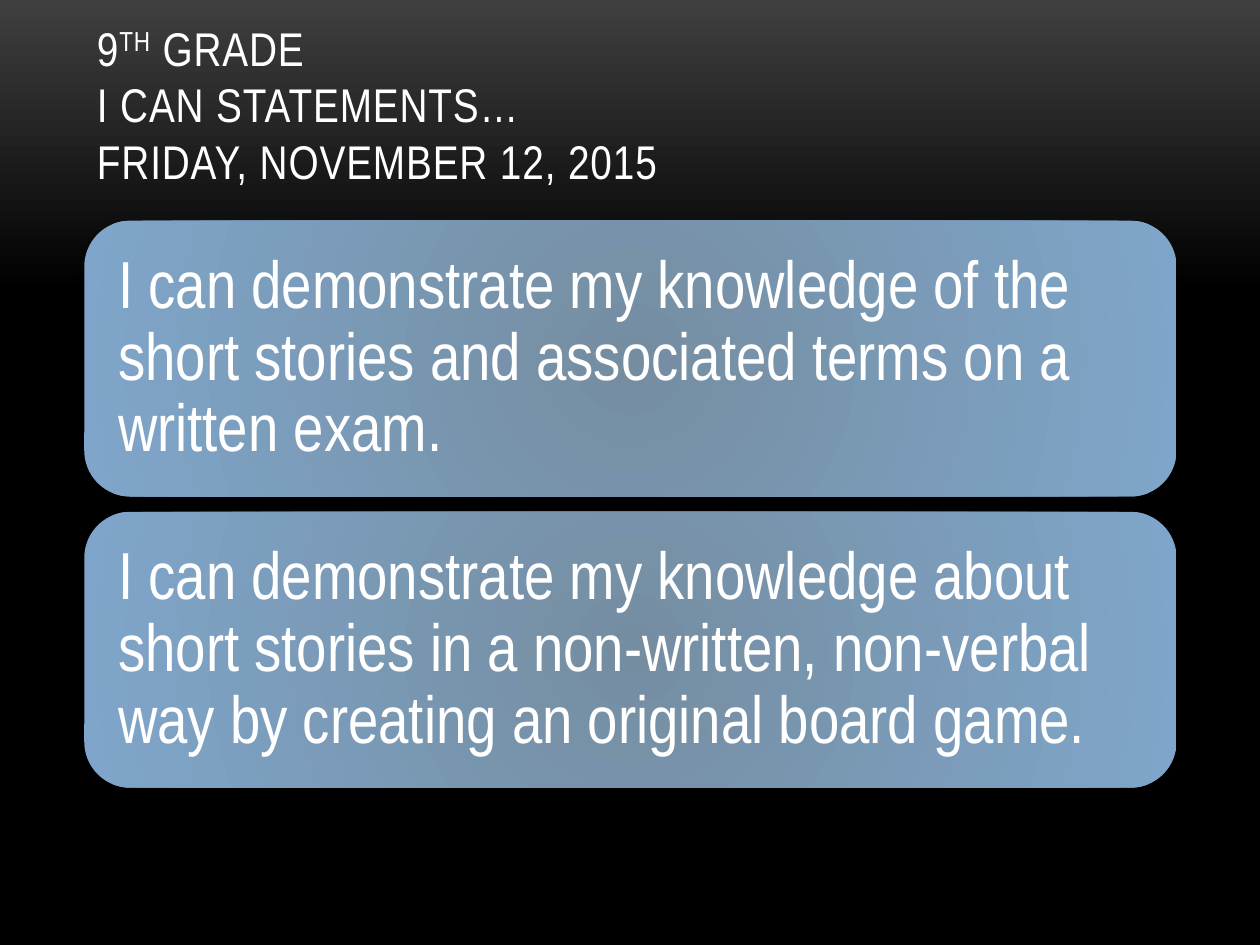
from lxml import etree
from pptx import Presentation
from pptx.dml.color import RGBColor
from pptx.enum.shapes import MSO_SHAPE
from pptx.enum.text import MSO_ANCHOR, MSO_AUTO_SIZE, PP_ALIGN
from pptx.oxml.ns import qn
from pptx.util import Cm, Pt

ROUNDED = MSO_SHAPE.ROUNDED_RECTANGLE
BOTTOM, MIDDLE = MSO_ANCHOR.BOTTOM, MSO_ANCHOR.MIDDLE
NO_FIT = MSO_AUTO_SIZE.NONE
LEFT = PP_ALIGN.LEFT

TITLE_ONLY = 5
FONT = "Arial Narrow"
WHITE = "FFFFFF"
BLACK = "000000"

MARGIN = 1.7
CONTENT_WIDTH = 22.02
PANEL_TOP = 4.45
PANEL_HEIGHT = 5.56
PANEL_GAP = 0.31

STATEMENTS = [
    "I can demonstrate my knowledge of the short stories and associated terms "
    "on a written exam.",
    "I can demonstrate my knowledge about short stories in a non-written, "
    "non-verbal way by creating an original board game.",
]


def color(hex_value):
    return RGBColor.from_string(hex_value)


def add_child(parent, tag, **attributes):
    child = etree.SubElement(parent, qn(tag))
    for name, value in attributes.items():
        child.set(name, str(value))
    return child


def add_color(parent, hex_value):
    return add_child(parent, "a:srgbClr", val=hex_value)


def start_gradient(fill, owner, stops):
    """Give the fill inside owner these (percent, colour) stops, with no direction yet."""
    fill.gradient()
    gradient = next(owner.iter(qn("a:gradFill")))
    for child in list(gradient):
        gradient.remove(child)
    stop_list = add_child(gradient, "a:gsLst")
    for percent, hex_value in stops:
        add_color(add_child(stop_list, "a:gs", pos=percent * 1000), hex_value)
    return gradient


def paint_background(page):
    stops = [(0, "3F3F3F"), (31, BLACK), (100, BLACK)]
    gradient = start_gradient(page.background.fill, page.element, stops)
    add_child(gradient, "a:lin", ang=90 * 60000, scaled=0)


def style_font(font, size):
    font.name = FONT
    font.size = Pt(size)
    font.color.rgb = color(WHITE)


def place_title(title, left, top, width, height):
    title.left, title.top = Cm(left), Cm(top)
    title.width, title.height = Cm(width), Cm(height)
    frame = title.text_frame
    frame.auto_size = NO_FIT
    frame.vertical_anchor = BOTTOM
    para = frame.paragraphs[0]
    para.alignment = LEFT
    para.add_run().text = "9"
    ordinal = para.add_run()
    ordinal.text = "TH"
    para.add_run().text = " GRADE"
    for line in ["I CAN STATEMENTS…", "FRIDAY, NOVEMBER 12, 2015"]:
        para.add_line_break()
        para.add_run().text = line
    for span in para.runs:
        style_font(span.font, 27)
        span.font._element.set("spc", "50")
    ordinal.font._element.set("baseline", "30000")


def add_soft_shadow(shape):
    shape.shadow.inherit = False
    effects = shape._element.spPr.find(qn("a:effectLst"))
    shadow = add_child(effects, "a:outerShdw", blurRad=Pt(4), dist=Pt(3.4),
                       dir=90 * 60000, rotWithShape=0)
    add_child(add_color(shadow, BLACK), "a:alpha", val=40000)


def add_panel(page, statement, left, top, width, height):
    panel = page.shapes.add_shape(ROUNDED, Cm(left), Cm(top), Cm(width), Cm(height))
    gradient = start_gradient(panel.fill, panel._element.spPr,
                              [(0, "758DA1"), (100, "7FA6CA")])
    circle = add_child(gradient, "a:path", path="circle")
    add_child(circle, "a:fillToRect", l=100000, t=100000, r=100000, b=100000)
    panel.line.fill.background()
    add_soft_shadow(panel)

    frame = panel.text_frame
    frame.word_wrap = True
    frame.vertical_anchor = MIDDLE
    frame.margin_left = frame.margin_right = Cm(0.41)
    frame.margin_top = frame.margin_bottom = Cm(0.41)
    frame.text = statement
    para = frame.paragraphs[0]
    para.alignment = LEFT
    para.line_spacing = 0.9
    style_font(para.runs[0].font, 38)


def main():
    deck = Presentation()
    deck.slide_width, deck.slide_height = Cm(25.4), Cm(19.05)
    page = deck.slides.add_slide(deck.slide_layouts[TITLE_ONLY])
    paint_background(page)
    place_title(page.shapes.title, MARGIN, 0.76, CONTENT_WIDTH, 3.18)
    for index, statement in enumerate(STATEMENTS):
        top = PANEL_TOP + index * (PANEL_HEIGHT + PANEL_GAP)
        add_panel(page, statement, MARGIN, top, CONTENT_WIDTH, PANEL_HEIGHT)
    deck.save("out.pptx")


if __name__ == "__main__":
    main()
